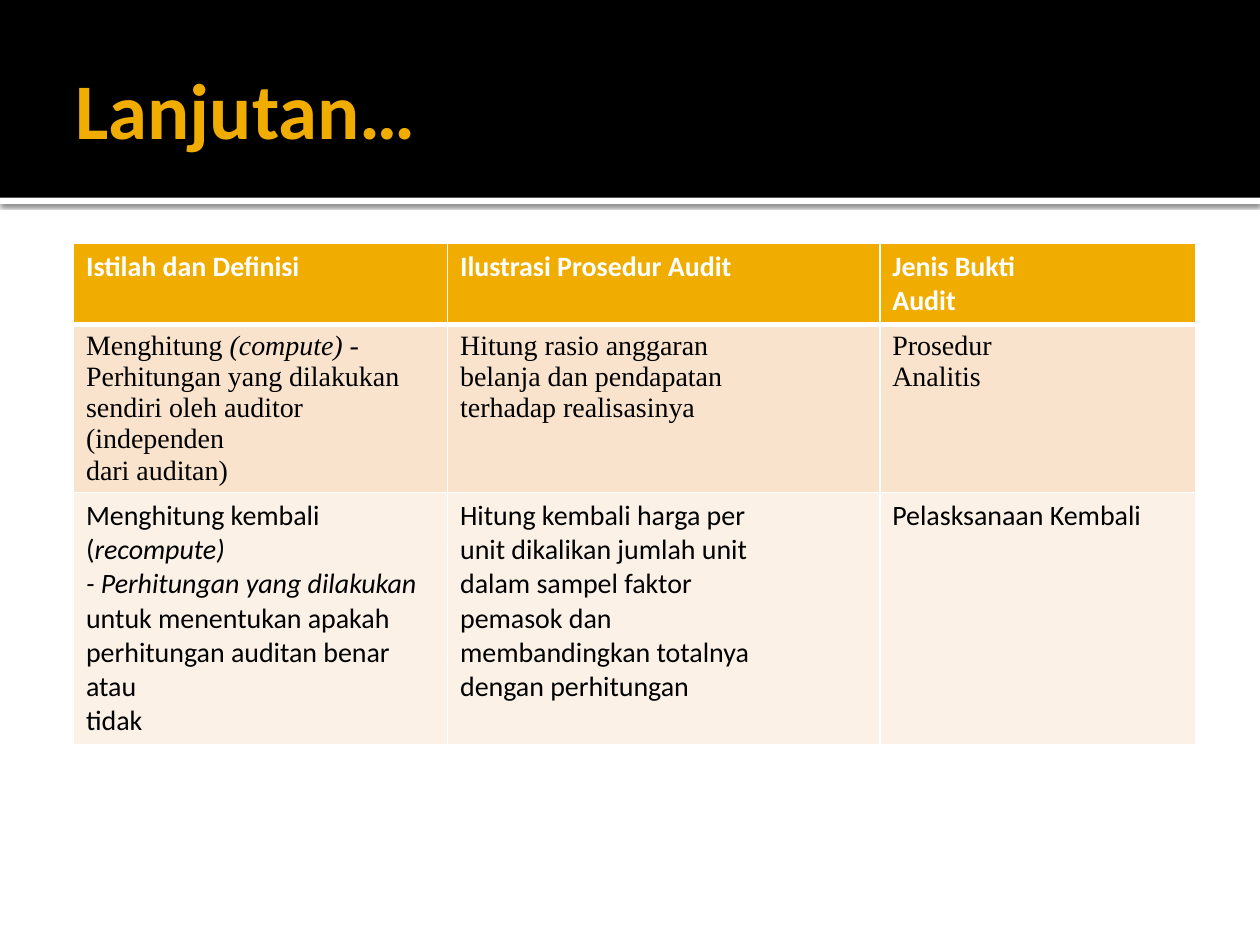
from dataclasses import dataclass

from lxml import etree
from pptx import Presentation
from pptx.dml.color import RGBColor
from pptx.enum import shapes, text
from pptx.oxml import ns
from pptx.util import Pt

HUES = {"gold": "F0AD00", "black": "000000", "white": "FFFFFF",
        "peach": "F9E3CC", "cream": "FCF1E7"}


@dataclass
class Band:
    top: float
    high: float
    hue: str
    shade: bool = False


@dataclass
class Row:
    fill: str
    ink: str
    face: str
    bold: bool
    edge: int  # width of the bottom border
    cells: list[str]


BANDS = [Band(113, 3.6, "white", True), Band(0, 113, "black")]
COLS = [213.75, 247, 180.75]

# Lines are paragraphs; an asterisk switches italics on or off
ROWS = [
    Row("gold", "white", "Calibri", True, 3,
        ["Istilah dan Definisi", "Ilustrasi Prosedur Audit",
         "Jenis Bukti\nAudit"]),
    Row("peach", "black", "Times New Roman", False, 1,
        ["Menghitung *(compute) -*\nPerhitungan yang dilakukan\n"
         "sendiri oleh auditor (independen\ndari auditan)",
         "Hitung rasio anggaran\nbelanja dan pendapatan\n"
         "terhadap realisasinya",
         "Prosedur\nAnalitis"]),
    Row("cream", "black", "Calibri", False, 1,
        ["Menghitung kembali (*recompute)*\n*- Perhitungan yang dilakukan*\n"
         "untuk menentukan apakah\nperhitungan auditan benar atau\ntidak",
         "Hitung kembali harga per\nunit dikalikan jumlah unit\n"
         "dalam sampel faktor\npemasok dan\nmembandingkan totalnya\n"
         "dengan perhitungan",
         "Pelasksanaan Kembali"]),
]


def tint(name: str) -> RGBColor:
    return RGBColor.from_string(HUES[name])


def node(root, tag: str, **vals):
    return etree.SubElement(root, ns.qn(tag),
                            {k: str(v) for k, v in vals.items()})


def style(font, hue: str, **vals) -> None:
    for key, val in vals.items():
        setattr(font, key, val)
    font.color.rgb = tint(hue)


def draw_band(slide, band: Band) -> None:
    box = slide.shapes.add_shape(shapes.MSO_SHAPE.RECTANGLE, 0,
                                 Pt(band.top), Pt(720), Pt(band.high))
    box.shadow.inherit = False
    box.fill.solid()
    box.fill.fore_color.rgb = tint(band.hue)
    box.line.fill.background()
    if band.shade:
        fx = box._element.spPr.find(ns.qn("a:effectLst"))
        drop = node(fx, "a:outerShdw", blurRad=Pt(2.5), dist=Pt(0.8),
                    dir=5400000, algn="tl", rotWithShape=0)
        node(node(drop, "a:srgbClr", val=HUES["black"]), "a:alpha", val=60000)


def draw_cell(cell, row: Row, words: str) -> None:
    # Borders come before the fill in the cell properties
    props = cell._tc.get_or_add_tcPr()
    for side in "LRTB":
        wide = row.edge if side == "B" else 1
        line = node(props, f"a:ln{side}", w=Pt(wide))
        node(node(line, "a:solidFill"), "a:srgbClr", val=HUES["white"])
    cell.fill.solid()
    cell.fill.fore_color.rgb = tint(row.fill)
    for i, line in enumerate(words.split("\n")):
        frame = cell.text_frame
        para = frame.add_paragraph() if i else frame.paragraphs[0]
        for j, part in enumerate(line.split("*")):
            if part:
                run = para.add_run()
                run.text = part
                style(run.font, row.ink, size=Pt(16), name=row.face,
                      bold=row.bold, italic=j % 2 == 1)


def draw_table(slide) -> None:
    table = slide.shapes.add_table(len(ROWS), len(COLS), Pt(42), Pt(139),
                                   Pt(sum(COLS)), Pt(88.5)).table
    for col, wide in zip(table.columns, COLS):
        col.width = Pt(wide)
    for r, row in enumerate(ROWS):
        table.rows[r].height = Pt(29.5)
        for c, words in enumerate(row.cells):
            draw_cell(table.cell(r, c), row, words)


def draw_title(slide, words: str) -> None:
    title = slide.shapes.title
    place = {"left": 36, "top": 12.25, "width": 648, "height": 98.5}
    for key, val in place.items():
        setattr(title, key, Pt(val))
    frame = title.text_frame
    pads = {"left": 7.2, "top": 3.6, "right": 3.6, "bottom": 3.6}
    for key, val in pads.items():
        setattr(frame, f"margin_{key}", Pt(val))
    frame.auto_size = text.MSO_AUTO_SIZE.NONE
    frame.vertical_anchor = text.MSO_ANCHOR.MIDDLE
    frame.text = words
    para = frame.paragraphs[0]
    para.alignment = text.PP_ALIGN.LEFT
    style(para.runs[0].font, "gold", size=Pt(45), name="Calibri", bold=True)
    # Bring the title in front of the bands
    slide.shapes._spTree.append(title._element)


def main() -> None:
    deck = Presentation()
    deck.slide_width, deck.slide_height = Pt(720), Pt(540)
    slide = deck.slides.add_slide(deck.slide_layouts[5])
    for band in BANDS:
        draw_band(slide, band)
    draw_title(slide, "Lanjutan…")
    draw_table(slide)
    deck.save("out.pptx")


if __name__ == "__main__":
    main()
